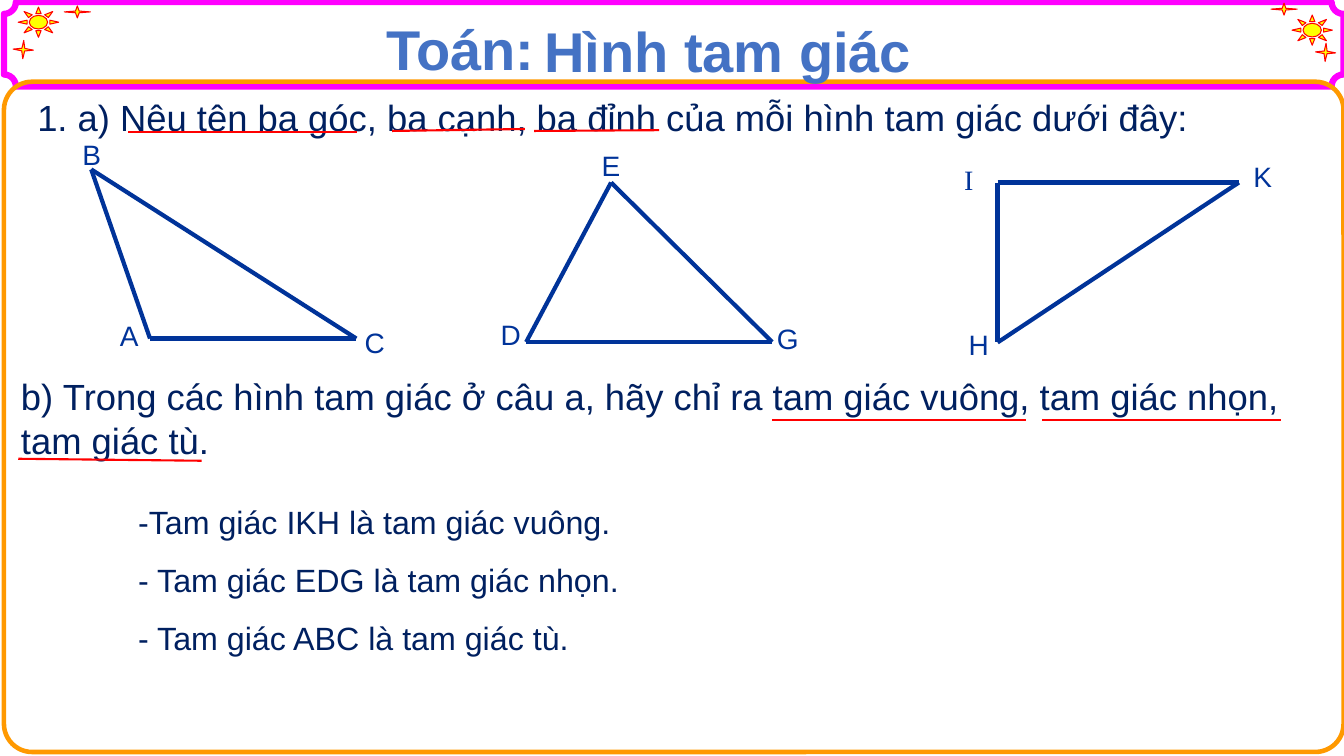
import itertools
from dataclasses import dataclass

import lxml.etree
import pptx
import pptx.dml.color
import pptx.enum.shapes
import pptx.enum.text
import pptx.oxml
import pptx.oxml.ns
import pptx.util

Cm = pptx.util.Cm
Pt = pptx.util.Pt
Kind = pptx.enum.shapes.MSO_SHAPE
Align = pptx.enum.text.PP_ALIGN


@dataclass(frozen=True)
class Theme:
    font: str = "Arial"
    serif: str = "Times New Roman"
    title: str = "4472C4"
    body: str = "002060"
    side: str = "003399"
    red: str = "FF0000"
    sun: str = "FFFF00"
    plaque: str = "FF00FF"
    frame: str = "FF9900"
    white: str = "FFFFFF"
    head: int = 40
    task: int = 26
    answer: int = 23
    label: int = 20


def rgb(code):
    return pptx.dml.color.RGBColor.from_string(code)


class Board:
    def __init__(self, slide, theme):
        self.slide = slide
        self.theme = theme

    def shape(self, kind, box, adjust, line, width, fill=None, turn=0):
        item = self.slide.shapes.add_shape(kind, *map(Cm, box))
        item.shadow.inherit = False
        item.adjustments[0] = adjust
        item.rotation = turn
        item.line.color.rgb = rgb(line)
        item.line.width = Pt(width)
        if fill:
            item.fill.solid()
            item.fill.fore_color.rgb = rgb(fill)
        else:
            item.fill.background()

    def spark(self, kind, box, adjust, turn=0):
        self.shape(kind, box, adjust, self.theme.red, 0.75, self.theme.sun, turn)

    def line(self, start, end, color, width, home=None):
        shapes = (home or self.slide).shapes
        straight = pptx.enum.shapes.MSO_CONNECTOR.STRAIGHT
        item = shapes.add_connector(straight, *map(Cm, start + end))
        item.line.color.rgb = rgb(color)
        item.line.width = Pt(width)
        tag = pptx.oxml.ns.qn("a:effectLst")
        lxml.etree.SubElement(item._element.spPr, tag)

    def text(self, box, lines, size, color, font=None, bold=False, wrap=True,
             align=Align.LEFT, space=1.0, home=None):
        shapes = (home or self.slide).shapes
        frame = shapes.add_textbox(*map(Cm, box)).text_frame
        frame.word_wrap = wrap
        frame.auto_size = pptx.enum.text.MSO_AUTO_SIZE.SHAPE_TO_FIT_TEXT
        frame.text = "\n".join(lines)
        for para in frame.paragraphs:
            para.alignment = align
            para.line_spacing = space
            para.font.name = font or self.theme.font
            para.font.size = Pt(size)
            para.font.bold = bold
            para.font.color.rgb = rgb(color)
        return frame

    def title(self, box, words):
        look = self.theme
        frame = self.text(box, [words], look.head, look.title, bold=True,
                          wrap=False, align=Align.CENTER)
        edge = pptx.oxml.parse_xml(
            f'<a:ln {pptx.oxml.ns.nsdecls("a")} w="{Pt(0.75)}"><a:solidFill>'
            f'<a:srgbClr val="{look.white}"/></a:solidFill></a:ln>')
        frame.paragraphs[0].runs[0]._r.get_or_add_rPr().insert(0, edge)

    def triangle(self, points):
        look = self.theme
        group = self.slide.shapes.add_group_shape()
        for (_, start, _), (_, end, _) in itertools.combinations(points, 2):
            self.line(start, end, look.side, 3, group)
        for name, _, spot in points:
            font = look.serif if name == "I" else look.font
            self.text(spot + (0.94, 1.12), [name], look.label, look.side,
                      font, home=group)


def main():
    deck = pptx.Presentation()
    deck.slide_width, deck.slide_height = Cm(33.87), Cm(19.05)
    look = Theme()
    board = Board(deck.slides.add_slide(deck.slide_layouts[6]), look)

    board.shape(Kind.PLAQUE, (0.1, 0.05, 33.76, 2.13), 0.142, look.plaque, 4.5)
    board.shape(Kind.ROUNDED_RECTANGLE, (0.1, 2.06, 33.76, 16.89), 0.042,
                look.frame, 3.25)

    corners = [((32.21, -0.1), (33.15, 1.09), (32.56, 0.38)),
               ((1.8, -0.03), (0.33, 1.02), (0.46, 0.18))]
    for high, low, sun in corners:
        board.spark(Kind.STAR_4_POINT, high + (0.3, 0.66), 0.1, 270)
        board.spark(Kind.STAR_4_POINT, low + (0.51, 0.46), 0.1, 183)
        board.spark(Kind.SUN, sun + (1.02, 0.76), 0.274)

    board.title((9.4, 0.25, 4.39, 1.96), "Toán:")
    board.title((13.41, 0.28, 9.86, 1.96), "Hình tam giác")
    board.text((0.69, 1.93, 29.85, 1.55),
               ["1. a) Nêu tên ba góc, ba cạnh, ba đỉnh của mỗi hình tam giác dưới đây:"],
               look.task, look.body, wrap=False, space=1.3)

    triangles = [
        [("A", (3.78, 8.53), (2.77, 7.9)),
         ("B", (2.3, 4.27), (1.83, 3.33)),
         ("C", (8.98, 8.53), (8.94, 8.08))],
        [("E", (15.4, 4.6), (14.91, 3.61)),
         ("G", (19.46, 8.62), (19.33, 7.98)),
         ("D", (13.26, 8.62), (12.37, 7.87))],
        [("I", (25.14, 4.6), (24.05, 3.96)),
         ("K", (31.22, 4.6), (31.34, 3.89)),
         ("H", (25.14, 8.63), (24.16, 8.13))],
    ]
    for points in triangles:
        board.triangle(points)

    board.text((0.28, 9.3, 32.77, 2.49),
               ["b) Trong các hình tam giác ở câu a, hãy chỉ ra tam giác vuông, "
                "tam giác nhọn, tam giác tù."], look.task, look.body)
    board.text((3.23, 12.04, 14.12, 4.67),
               ["-Tam giác IKH là tam giác vuông.",
                "- Tam giác EDG là tam giác nhọn.",
                "- Tam giác ABC là tam giác tù."],
               look.answer, look.body, space=1.5)

    marks = [((3.23, 3.33), (8.99, 3.33)),
             ((9.88, 3.3), (13.23, 3.25)),
             ((13.46, 3.3), (16.61, 3.28)),
             ((19.46, 10.59), (25.86, 10.59)),
             ((26.26, 10.59), (32.28, 10.59)),
             ((0.46, 11.56), (5.08, 11.61))]
    for start, end in marks:
        board.line(start, end, look.red, 1.5)

    deck.save("out.pptx")


if __name__ == "__main__":
    main()
